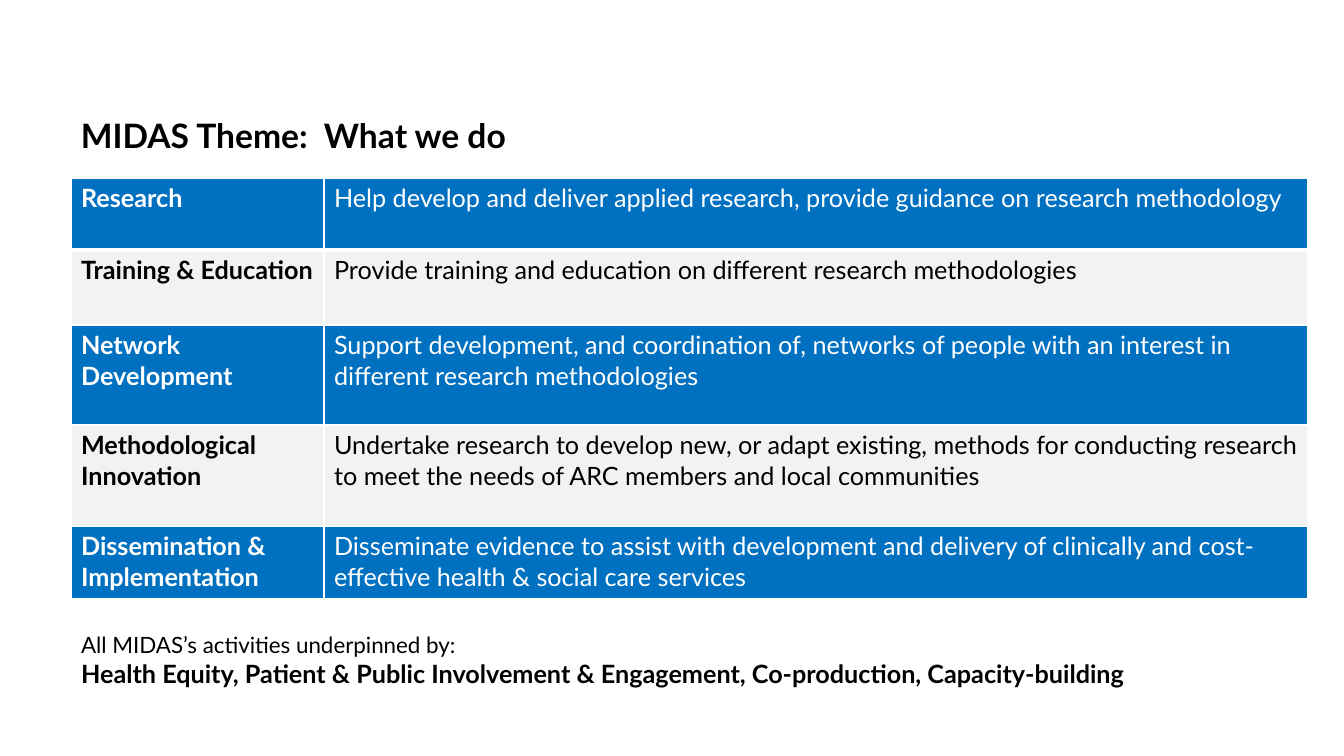
from dataclasses import dataclass

from lxml.etree import SubElement
from pptx import Presentation
from pptx.dml.color import RGBColor
from pptx.enum.text import MSO_ANCHOR
from pptx.oxml.ns import qn
from pptx.util import Emu, Pt

HEADING = "MIDAS Theme:  What we do"
ACTIVITIES = [
    ("Research",
     "Help develop and deliver applied research, provide guidance on research methodology"),
    ("Training & Education",
     "Provide training and education on different research methodologies"),
    ("Network Development",
     "Support development, and coordination of, networks of people with an interest in "
     "different research methodologies"),
    ("Methodological Innovation",
     "Undertake research to develop new, or adapt existing, methods for conducting research "
     "to meet the needs of ARC members and local communities"),
    ("Dissemination & Implementation",
     "Disseminate evidence to assist with development and delivery of clinically and "
     "cost-effective health & social care services"),
]
FOUNDATION_INTRO = "All MIDAS’s activities underpinned by:"
FOUNDATIONS = ("Health Equity, Patient & Public Involvement & Engagement, "
               "Co-production, Capacity-building")

SLIDE_SIZE = (1344, 756)
HEADING_BOX = (71, 110, 640, 50)
TABLE_ORIGIN = (71, 178)
COLUMN_WIDTHS = (253, 984)
ROW_HEIGHTS = (72, 75, 100, 101, 73, 95)


@dataclass(frozen=True)
class Theme:
    font: str = "Lato"
    blue: str = "0070C0"
    grey: str = "F2F2F2"
    white: str = "FFFFFF"
    black: str = "000000"
    heading_size: int = 24
    body_size: int = 18
    intro_size: int = 16
    rule: int = 1
    first_rule: int = 3


THEME = Theme()


def px(length):
    return Emu(round(length * 914400 / 100.8))


def write(paragraph, wording, size, color, bold):
    paragraph.text = wording
    paragraph.font.name = THEME.font
    paragraph.font.size = Pt(size)
    paragraph.font.bold = bold
    paragraph.font.color.rgb = RGBColor.from_string(color)


def paint(cell, fill, top, bottom):
    properties = cell._tc.get_or_add_tcPr()
    for side, width in (("L", THEME.rule), ("R", THEME.rule), ("T", top), ("B", bottom)):
        border = SubElement(properties, qn(f"a:ln{side}"), w=str(Pt(width)))
        SubElement(SubElement(border, qn("a:solidFill")), qn("a:srgbClr"), val=THEME.white)
    cell.fill.solid()
    cell.fill.fore_color.rgb = RGBColor.from_string(fill)


def add_heading(slide):
    heading = slide.shapes.add_textbox(*map(px, HEADING_BOX)).text_frame
    heading.word_wrap = True
    write(heading.paragraphs[0], HEADING, THEME.heading_size, THEME.black, True)


def add_activities(slide):
    frame = slide.shapes.add_table(
        len(ROW_HEIGHTS), len(COLUMN_WIDTHS), *map(px, TABLE_ORIGIN),
        px(sum(COLUMN_WIDTHS)), px(sum(ROW_HEIGHTS)))
    activities = frame.table
    activities.first_row = activities.horz_banding = False
    for column, width in zip(activities.columns, COLUMN_WIDTHS):
        column.width = px(width)
    for index, (row, height) in enumerate(zip(activities.rows, ROW_HEIGHTS)):
        row.height = px(height)
        fill = THEME.grey if index % 2 else THEME.blue
        if index == len(ACTIVITIES):
            fill = THEME.white
        top = THEME.first_rule if index == 1 else THEME.rule
        bottom = THEME.first_rule if index == 0 else THEME.rule
        for cell in row.cells:
            paint(cell, fill, top, bottom)

    for index, activity in enumerate(ACTIVITIES):
        color = THEME.black if index % 2 else THEME.white
        for column, wording in enumerate(activity):
            paragraph = activities.cell(index, column).text_frame.paragraphs[0]
            write(paragraph, wording, THEME.body_size, color, column == 0)

    footing = activities.cell(len(ACTIVITIES), 0)
    footing.merge(activities.cell(len(ACTIVITIES), 1))
    footing.vertical_anchor = MSO_ANCHOR.BOTTOM
    text = footing.text_frame
    write(text.paragraphs[0], FOUNDATION_INTRO, THEME.intro_size, THEME.black, False)
    write(text.add_paragraph(), FOUNDATIONS, THEME.body_size, THEME.black, True)


def main():
    deck = Presentation()
    deck.slide_width, deck.slide_height = map(px, SLIDE_SIZE)
    slide = deck.slides.add_slide(deck.slide_layouts[6])
    add_activities(slide)
    add_heading(slide)
    deck.save("out.pptx")


if __name__ == "__main__":
    main()
